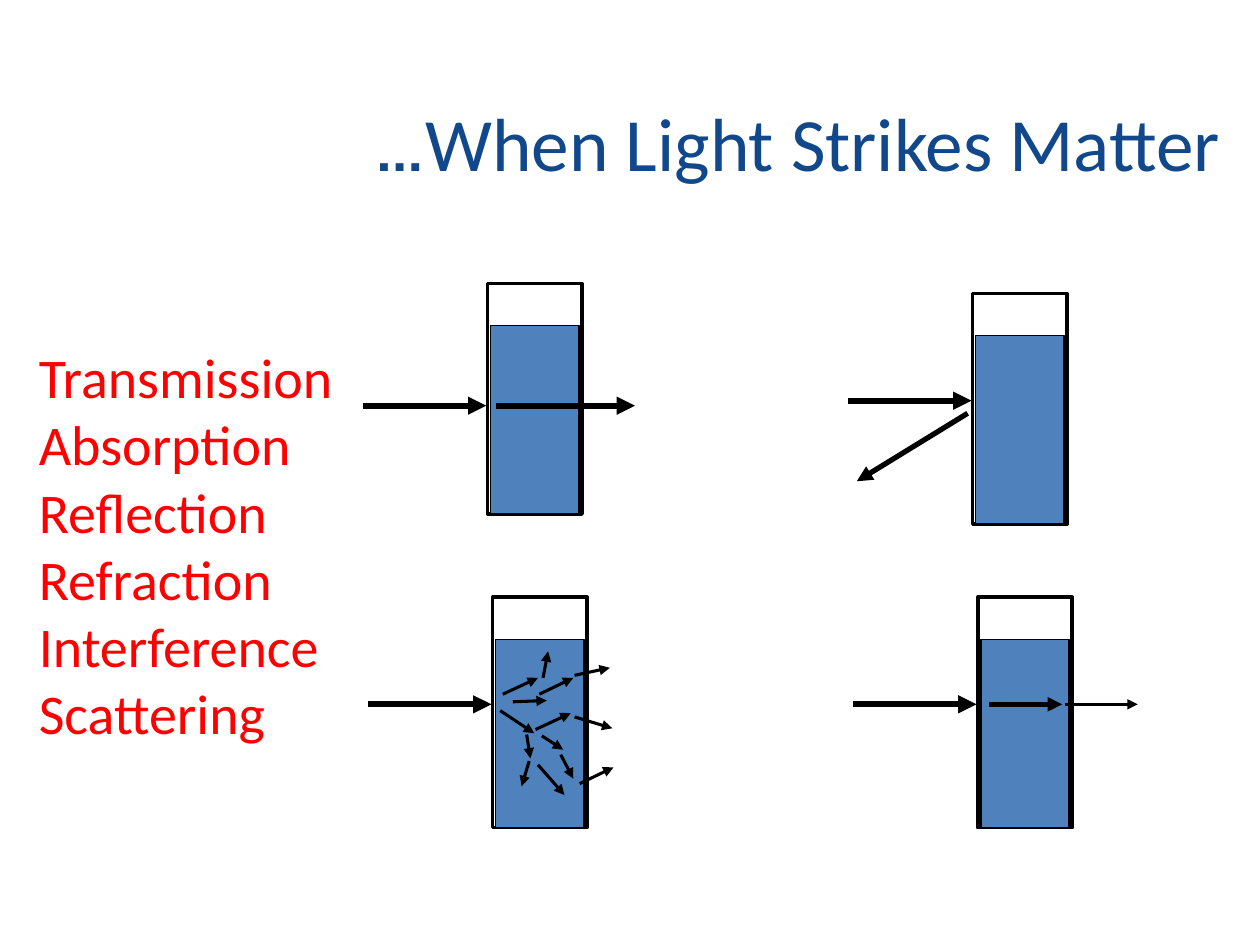
from lxml import etree
from pptx import Presentation, util as u
from pptx.dml.color import RGBColor
from pptx.enum import shapes, text
from pptx.oxml import ns

BLACK, WHITE, WATER, NAVY, RED = "000000", "FFFFFF", "4F81BD", "11478B", "FF0000"


def color(value):
    return RGBColor.from_string(value)


class Board:
    """Draws styled elements on a slide grid of 100 columns by 75 rows."""

    columns, rows, font = 100, 75, "Calibri"

    def __init__(self, presentation):
        self.width = presentation.slide_width
        self.height = presentation.slide_height
        self.slide = presentation.slides.add_slide(presentation.slide_layouts[6])

    def place(self, column, row):
        return (u.Emu(round(column * self.width / self.columns)),
                u.Emu(round(row * self.height / self.rows)))

    def box(self, left, top, width, height, fill, weight):
        shape = self.slide.shapes.add_shape(
            shapes.MSO_SHAPE.RECTANGLE, *self.place(left, top), *self.place(width, height))
        shape.shadow.inherit = False
        shape.fill.solid()
        shape.fill.fore_color.rgb = color(fill)
        shape.line.color.rgb = color(BLACK)
        shape.line.width = u.Pt(weight)

    def arrow(self, start, end, weight=1.75):
        connector = self.slide.shapes.add_connector(
            shapes.MSO_CONNECTOR.STRAIGHT, *self.place(*start), *self.place(*end))
        connector.line.color.rgb = color(BLACK)
        connector.line.width = u.Pt(weight)
        outline = connector.line._get_or_add_ln()
        etree.SubElement(outline, ns.qn("a:tailEnd"), type="triangle")
        etree.SubElement(connector._element.spPr, ns.qn("a:effectLst"))

    def cuvette(self, left, top, beam_row):
        self.box(left, top, 7.5, 18.3, WHITE, 2)
        self.box(left + 0.25, top + 3.35, 7, 14.9, WATER, 0.75)
        self.arrow((left - 9.9, beam_row), (left - 0.1, beam_row), 3.5)

    def label(self, left, top, width, height, lines, size, fill, anchor, align, rtl=False):
        shape = self.slide.shapes.add_textbox(
            *self.place(left, top), *self.place(width, height))
        frame = shape.text_frame
        for name, value in {"word_wrap": True, "vertical_anchor": anchor,
                            "text": "\n".join(lines)}.items():
            setattr(frame, name, value)
        for paragraph in frame.paragraphs:
            paragraph.alignment = align
            if rtl:
                paragraph._p.get_or_add_pPr().set("rtl", "1")
            for name, value in {"name": self.font, "size": u.Pt(size)}.items():
                setattr(paragraph.runs[0].font, name, value)
            paragraph.runs[0].font.color.rgb = color(fill)


CUVETTES = [(38.7, 22.5, 32.2), (77.2, 23.3, 31.8), (77.6, 47.4, 55.9), (39.1, 47.4, 55.9)]

TRANSMITTED = ((39.4, 32.2), (50.4, 32.2), 3.5)
REFLECTED = ((76.8, 32.8), (68, 38.2), 3)
ABSORBED = [((78.5, 55.9), (84.3, 55.9), 2.75), ((84.5, 55.9), (90.3, 55.9), 1.75)]
SCATTERED = [
    ((39.9, 55.1), (42.7, 53.8)), ((40.7, 55.7), (43.4, 55.6)),
    ((39.7, 56.4), (42.4, 58.2)), ((42.8, 55.1), (45.5, 53.8)),
    ((42.5, 57.9), (45.3, 56.6)), ((43, 58.4), (44.7, 59.5)),
    ((41.8, 58.3), (42.1, 60.2)), ((43.1, 53.8), (43.5, 51.7)),
    ((44.5, 59.9), (45.5, 61.8)), ((42, 60.4), (41.4, 62.4)),
    ((42.7, 60.7), (44.8, 63.1)), ((45.6, 53.6), (48.4, 53)),
    ((45.6, 56.9), (48.6, 57.8)), ((46, 62.2), (48.7, 60.9)),
]
EFFECTS = ["Transmission", "Absorption", "Reflection Refraction", "Interference", "Scattering"]


def main():
    presentation = Presentation()
    presentation.slide_width, presentation.slide_height = u.Inches(10), u.Inches(7.5)
    board = Board(presentation)
    board.label(12.8, 5, 85, 12.5, ["When Light Strikes Matter…"], 43, NAVY,
                text.MSO_ANCHOR.MIDDLE, text.PP_ALIGN.RIGHT, rtl=True)
    for cuvette in CUVETTES:
        board.cuvette(*cuvette)
    for ray in [TRANSMITTED, REFLECTED, *ABSORBED, *SCATTERED]:
        board.arrow(*ray)
    board.label(2.1, 26.7, 27.6, 44.1, EFFECTS, 32, RED,
                text.MSO_ANCHOR.TOP, text.PP_ALIGN.LEFT)
    presentation.save("out.pptx")


if __name__ == "__main__":
    main()
